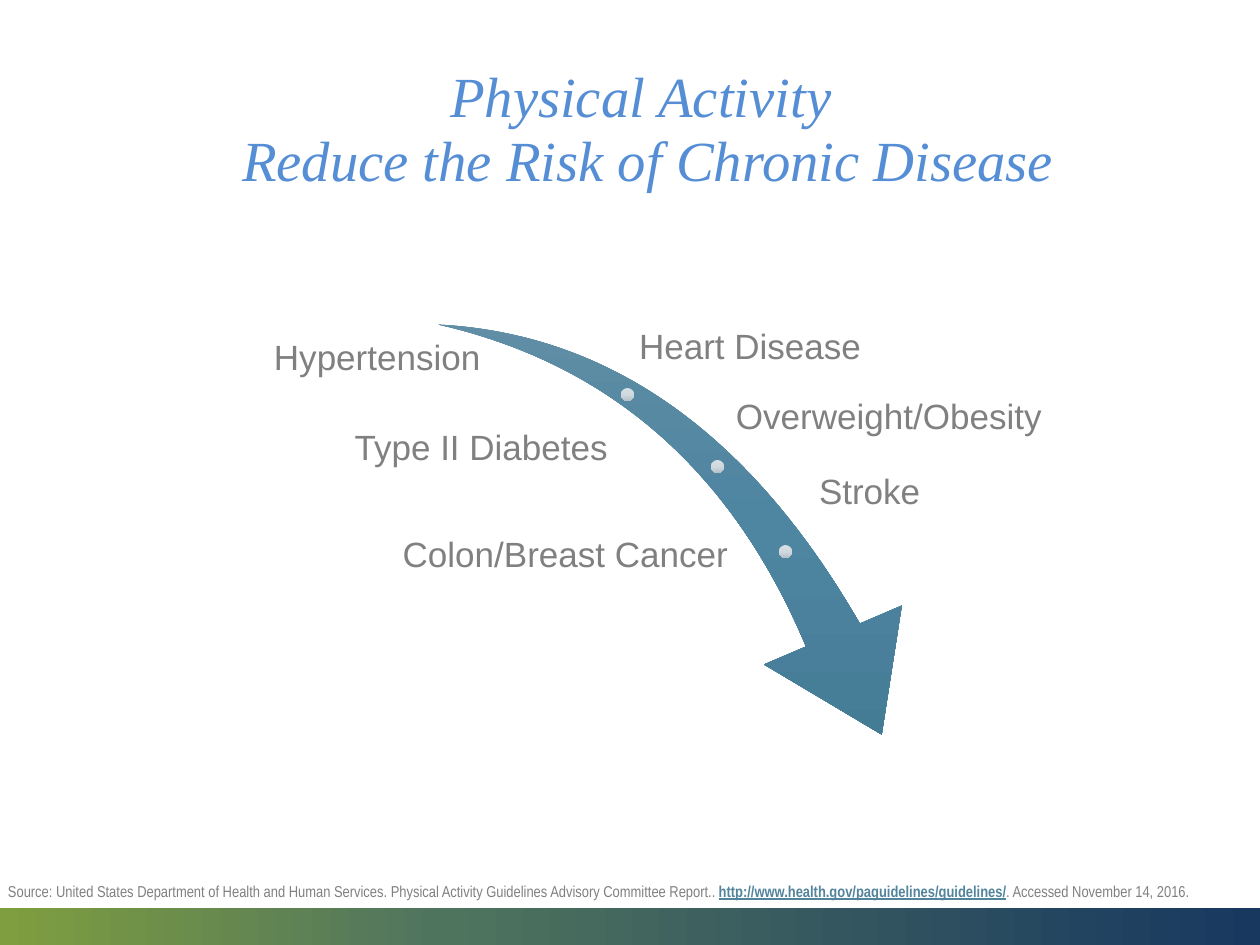
from dataclasses import dataclass

from lxml.etree import SubElement as Sub
from pptx import Presentation
from pptx.dml.color import RGBColor as Rgb
from pptx.enum.shapes import MSO_SHAPE as Kind
from pptx.enum.text import MSO_ANCHOR as Anchor, PP_ALIGN as Align
from pptx.oxml.ns import qn
from pptx.util import Emu, Pt

SCALE = 914400 / 126


def px(num):
    """Turn px into EMU."""
    return Emu(round(num * SCALE))


@dataclass(frozen=True)
class Theme:
    """Colours, fonts and type sizes."""
    title: str = "558ED5"
    text: str = "808080"
    link: str = "52849C"
    band: tuple = ((0, "7F9E3F"), (35, "4F745E"), (100, "183860"))
    arrow: tuple = ((0, "6992A8"), (50, "4E85A0"), (100, "427891"))
    dot: tuple = ((0, "D8DFE4"), (50, "D0D9DF"), (100, "B8C1C7"))
    serif: str = "Times New Roman"
    sans: str = "Arial"
    slim: str = "Arial Narrow"
    big: float = 32.4
    mid: float = 20
    small: float = 9


class Deck:
    """Holds the theme and the current slide."""

    def __init__(self, theme):
        """Start a deck with one blank slide."""
        self.theme = theme
        self.prs = Presentation()
        self.prs.slide_width, self.prs.slide_height = px(1260), px(945)
        self.slide = self.prs.slides.add_slide(self.prs.slide_layouts[6])

    def shape(self, kind, box, stops, angle=90, turn=0, adjust=()):
        """Add a preset shape with a gradient fill."""
        item = self.slide.shapes.add_shape(kind, *map(px, box))
        item.shadow.inherit = False
        item.line.fill.background()
        item.rotation = turn
        for i, value in enumerate(adjust):
            item.adjustments[i] = value
        item.fill.gradient()
        item.fill.gradient_angle = (360 - angle) % 360
        grad = item._element.spPr.find(qn("a:gradFill"))
        grad.set("rotWithShape", "0")
        ramp = grad.find(qn("a:gsLst"))
        ramp.clear()
        for place, color in stops:
            stop = Sub(ramp, qn("a:gs"), pos=str(place * 1000))
            Sub(stop, qn("a:srgbClr"), val=color)

    def text(self, box, words, font, size, color, align=Align.LEFT,
             anchor=Anchor.TOP, pad=(13, 6, 13, 6), space=1.0):
        """Add a text box and return its paragraph."""
        frame = self.slide.shapes.add_textbox(*map(px, box)).text_frame
        frame.word_wrap = True
        frame.vertical_anchor = anchor
        (frame.margin_left, frame.margin_top,
         frame.margin_right, frame.margin_bottom) = map(px, pad)
        frame.text = words
        para = frame.paragraphs[0]
        para.alignment = align
        para.line_spacing = space
        for run in para.runs:
            self.style(run, font, size, color)
        return para

    def style(self, run, font, size, color):
        """Format one run."""
        run.font.name, run.font.size = font, Pt(size)
        run.font.color.rgb = Rgb.from_string(color)

    def title(self, box, words):
        """Add the slide title."""
        look = self.theme
        para = self.text(box, words, look.serif, look.big, look.title,
                         Align.CENTER, pad=(13, 85, 13, 6), space=0.94)
        for run in para.runs:
            run.font.italic = True

    def label(self, box, words, align, anchor):
        """Add a disease label beside the arrow."""
        look = self.theme
        self.text(box, words, look.sans, look.mid, look.text,
                  align, anchor, (4, 4, 4, 4), 0.9)

    def source(self, box, lead, link, tail):
        """Add the source line with its address marked."""
        look = self.theme
        para = self.text(box, lead, look.slim, look.small, look.text)
        for words, color in ((link, look.link), (tail, look.text)):
            run = para.add_run()
            run.text = words
            self.style(run, look.slim, look.small, color)
            run.font.bold = run.font.underline = words == link


def main():
    """Build and save the slide."""
    look = Theme()
    deck = Deck(look)
    deck.shape(Kind.RECTANGLE, (0, 908, 1260, 37), look.band, angle=0)
    deck.title((53, -19, 1176, 233),
               "Physical Activity\v Reduce the Risk of Chronic Disease")
    deck.source((-5, 876, 1218, 32),
                "Source: United States Department of Health and Human Services. "
                "Physical Activity Guidelines Advisory Committee Report.. ",
                "http://www.health.gov/paguidelines/guidelines/",
                ". Accessed November 14, 2016.")
    deck.shape(Kind.SWOOSH_ARROW, (427, 340, 520, 363), look.arrow,
               turn=73.3, adjust=(0.16, 0.31))
    for left, top in ((621, 388), (711, 460), (779, 545)):
        deck.shape(Kind.OVAL, (left, top, 13, 13), look.dot)
    for box, words, align, anchor in (
        ((726, 389, 326, 52), "Overweight/Obesity", Align.CENTER, Anchor.BOTTOM),
        ((635, 300, 358, 96), "Heart Disease", Align.LEFT, Anchor.MIDDLE),
        ((328, 401, 284, 96), "Type II Diabetes", Align.RIGHT, Anchor.MIDDLE),
        ((815, 445, 218, 96), "Stroke", Align.LEFT, Anchor.MIDDLE),
        ((378, 533, 375, 96), "Colon/Breast Cancer", Align.CENTER, Anchor.TOP),
    ):
        deck.label(box, words, align, anchor)
    deck.text((261, 329, 242, 55), "Hypertension",
              look.sans, look.mid, look.text)
    deck.prs.save("out.pptx")


if __name__ == "__main__":
    main()
